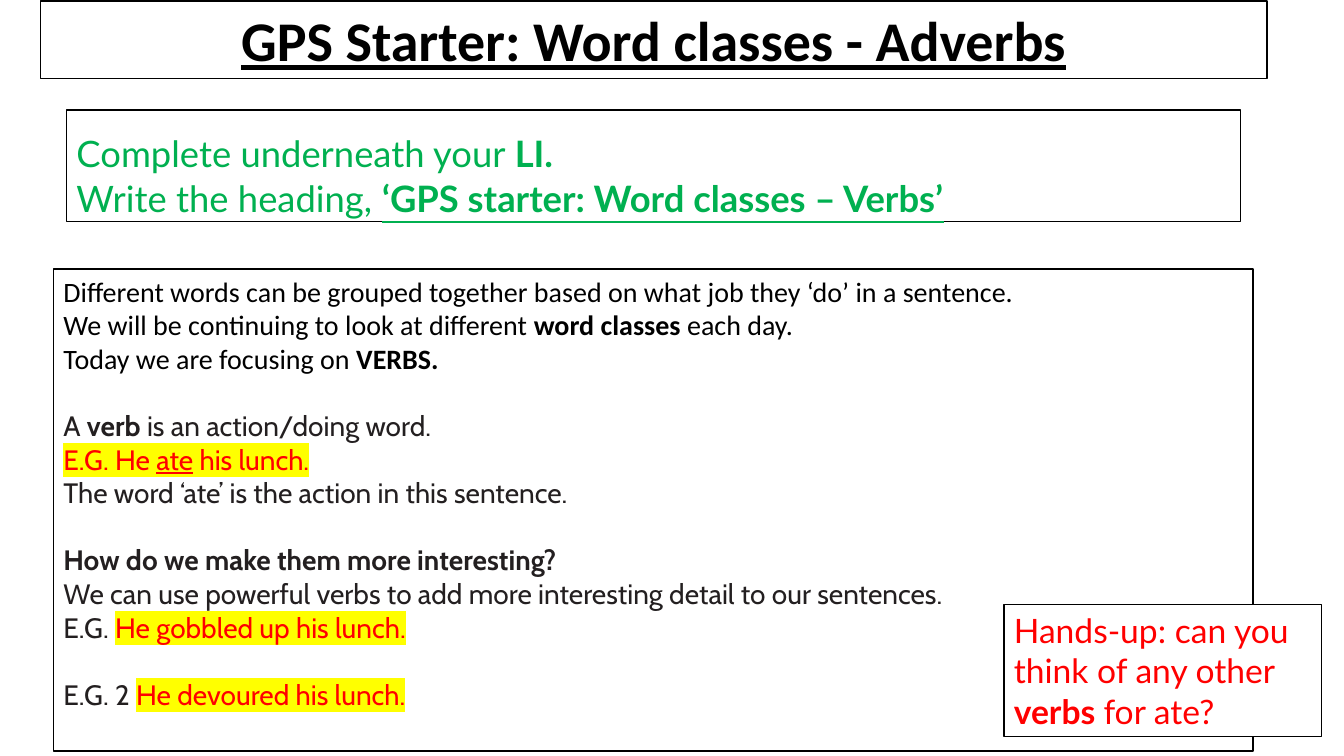
from dataclasses import dataclass

from lxml.etree import SubElement
from pptx import Presentation
from pptx.dml.color import RGBColor as Color
from pptx.enum.shapes import MSO_SHAPE as Shape
from pptx.enum.text import MSO_ANCHOR as Anchor, PP_ALIGN as Align
from pptx.oxml.ns import qn
from pptx.util import Pt


@dataclass(frozen=True)
class Theme:
    black: str = "000000"
    white: str = "FFFFFF"
    ink: str = "231F20"
    green: str = "00B050"
    red: str = "FF0000"
    yellow: str = "FFFF00"
    title_size: int = 40
    task_size: int = 26
    question_size: int = 24
    body_size: int = 20


THEME = Theme()


@dataclass(frozen=True)
class Style:
    font: str
    size: int
    color: str
    bold: bool = False
    underline: bool = False
    highlight: str = ""


TITLE = Style("Calibri", THEME.title_size, THEME.black, bold=True, underline=True)
TASK = Style("Lato", THEME.task_size, THEME.green)
TASK_BOLD = Style("Lato", THEME.task_size, THEME.green, bold=True)
TASK_HEADING = Style("Lato", THEME.task_size, THEME.green, bold=True, underline=True)
INTRO = Style("Calibri", THEME.body_size, THEME.black)
INTRO_BOLD = Style("Calibri", THEME.body_size, THEME.black, bold=True)
BODY = Style("Cabin", THEME.body_size, THEME.ink)
BODY_BOLD = Style("Cabin", THEME.body_size, THEME.ink, bold=True)
EXAMPLE = Style("Cabin", THEME.body_size, THEME.red, highlight=THEME.yellow)
EXAMPLE_VERB = Style("Cabin", THEME.body_size, THEME.red, underline=True,
                     highlight=THEME.yellow)
QUESTION = Style("Lato", THEME.question_size, THEME.red)
QUESTION_BOLD = Style("Lato", THEME.question_size, THEME.red, bold=True)

# Each line is a list of (text, style) pieces
TITLE_LINES = [[("GPS Starter: Word classes - Adverbs", TITLE)]]
TASK_LINES = [
    [("Complete underneath your ", TASK), ("LI.", TASK_BOLD)],
    [("Write the heading, ", TASK),
     ("‘GPS starter: Word classes – Verbs’", TASK_HEADING)],
]
LESSON_LINES = [
    [("Different words can be grouped together based on what job they "
      "‘do’ in a sentence.", INTRO)],
    [("We will be continuing to look at different ", INTRO),
     ("word classes ", INTRO_BOLD), ("each day.", INTRO)],
    [("Today we are focusing on ", INTRO), ("VERBS.", INTRO_BOLD)],
    [("A ", BODY), ("verb ", BODY_BOLD), ("is an action/doing word.", BODY)],
    [("E.G. He ", EXAMPLE), ("ate", EXAMPLE_VERB), (" his lunch.", EXAMPLE)],
    [("The word ‘ate’ is the action in this sentence.", BODY)],
    [("How do we make them more interesting?", BODY_BOLD)],
    [("We can use powerful verbs to add more interesting detail to our "
      "sentences.", BODY)],
    [("E.G. ", BODY), ("He gobbled up his lunch.", EXAMPLE)],
    [("E.G. 2 ", BODY), ("He devoured his lunch.", EXAMPLE)],
]
LESSON_GAPS = {3: 24, 6: 24, 9: 24}  # line number: space before it
QUESTION_LINES = [
    [("Hands-up: can you think of any other ", QUESTION),
     ("verbs ", QUESTION_BOLD), ("for ate?", QUESTION)],
]


def add_run(paragraph, text, style):
    run = paragraph.add_run()
    run.text = text
    font = run.font
    font.name, font.size = style.font, Pt(style.size)
    font.bold, font.underline = style.bold, style.underline
    font.color.rgb = Color.from_string(style.color)
    if style.highlight:
        properties = run._r.get_or_add_rPr()
        highlight = SubElement(properties, qn("a:highlight"))
        SubElement(highlight, qn("a:srgbClr"), val=style.highlight)
        properties.find(qn("a:solidFill")).addnext(highlight)


def add_box(slide, left, top, width, height, lines, align=Align.LEFT,
            anchor=Anchor.TOP, gaps=None, line_spacing=1.0):
    """Add a white, black-edged box holding the given lines."""
    box = slide.shapes.add_shape(Shape.RECTANGLE, Pt(left), Pt(top),
                                 Pt(width), Pt(height))
    box.shadow.inherit = False
    box.fill.solid()
    box.fill.fore_color.rgb = Color.from_string(THEME.white)
    box.line.color.rgb = Color.from_string(THEME.black)
    box.line.width = Pt(1)
    frame = box.text_frame
    frame.word_wrap = True
    frame.vertical_anchor = anchor
    for number, pieces in enumerate(lines):
        paragraph = frame.add_paragraph() if number else frame.paragraphs[0]
        paragraph.alignment = align
        paragraph.line_spacing = line_spacing
        paragraph.space_before = Pt((gaps or {}).get(number, 0))
        for text, style in pieces:
            add_run(paragraph, text, style)
    return box


def main():
    presentation = Presentation()
    presentation.slide_width, presentation.slide_height = Pt(960), Pt(540)
    slide = presentation.slides.add_slide(presentation.slide_layouts[6])

    # Task instructions
    task = add_box(slide, 47.5, 78.5, 838.8, 79.9, TASK_LINES,
                   anchor=Anchor.BOTTOM, gaps={1: 10}, line_spacing=0.7)
    task.text_frame.margin_bottom = Pt(2.2)

    # Title
    add_box(slide, 28.8, 0.7, 876.2, 55.4, TITLE_LINES, align=Align.CENTER)

    # Lesson text
    add_box(slide, 38.2, 192.2, 856.8, 344.2, LESSON_LINES, gaps=LESSON_GAPS)

    # Question for the class
    add_box(slide, 717.1, 432, 226.8, 94.3, QUESTION_LINES)

    presentation.save("out.pptx")


if __name__ == "__main__":
    main()
